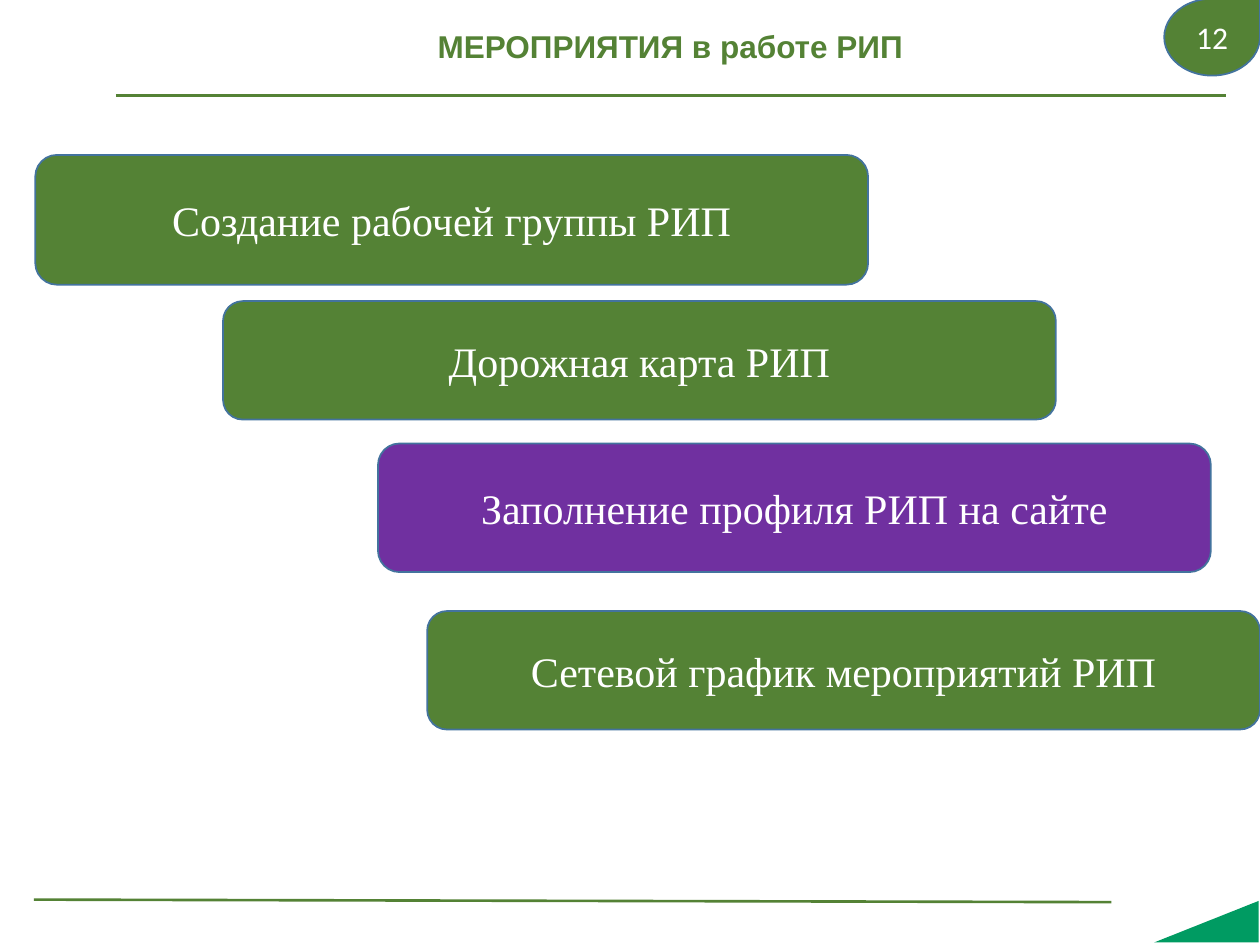
import pptx
import pptx.util
import pptx.dml.color
import pptx.enum.shapes
import pptx.enum.text
import pptx.oxml.ns
from lxml import etree

Inches, Pt = pptx.util.Inches, pptx.util.Pt
RGBColor = pptx.dml.color.RGBColor
SHAPE = pptx.enum.shapes.MSO_SHAPE

GREEN = RGBColor(0x54, 0x82, 0x35)
PURPLE = RGBColor(0x70, 0x30, 0xA0)
EMERALD = RGBColor(0x00, 0x9B, 0x62)
OUTLINE = RGBColor(0x43, 0x73, 0x9E)
WHITE = RGBColor(0xFF, 0xFF, 0xFF)

# Content
HEADING = "МЕРОПРИЯТИЯ в работе РИП"
PAGE_NUMBER = "12"
STEP_WIDTH = 6.61
STEPS = [  # wording, left, top, height, fill
    ("Создание рабочей группы РИП", 0.28, 1.23, 1.03, GREEN),
    ("Дорожная карта РИП", 1.77, 2.39, 0.94, GREEN),
    ("Заполнение профиля РИП на сайте", 3, 3.52, 1.02, PURPLE),
    ("Сетевой график мероприятий РИП", 3.39, 4.85, 0.94, GREEN),
]
RULES = [(0.92, 0.76, 9.73, 0.76), (0.27, 7.14, 8.82, 7.16)]

# Text formats
HEADING_FONT = {"name": "Arial", "size": Pt(18), "bold": True}
STEP_FONT = {"name": "Times New Roman", "size": Pt(24)}
NUMBER_FONT = {"name": "Calibri", "size": Pt(18)}


def write(holder, wording, font_format, color):
    frame = holder.text_frame
    frame.word_wrap = True
    frame.vertical_anchor = pptx.enum.text.MSO_ANCHOR.MIDDLE
    paragraph = frame.paragraphs[0]
    paragraph.alignment = pptx.enum.text.PP_ALIGN.CENTER
    run = paragraph.add_run()
    run.text = wording
    for attribute, value in font_format.items():
        setattr(run.font, attribute, value)
    run.font.color.rgb = color


def add_filled(slide, preset, box, fill, outline=None):
    shape = slide.shapes.add_shape(preset, *map(Inches, box))
    shape.shadow.inherit = False
    shape.fill.solid()
    shape.fill.fore_color.rgb = fill
    if outline is None:
        shape.line.fill.background()
    else:
        shape.line.color.rgb = outline
        shape.line.width = Pt(1)
    return shape


def add_rule(slide, ends):
    rule = slide.shapes.add_connector(
        pptx.enum.shapes.MSO_CONNECTOR.STRAIGHT, *map(Inches, ends))
    rule.line.color.rgb = GREEN
    rule.line.width = Pt(1.5)
    etree.SubElement(rule._element.spPr, pptx.oxml.ns.qn("a:effectLst"))


def main():
    deck = pptx.Presentation()
    deck.slide_width, deck.slide_height = Inches(10), Inches(7.5)
    slide = deck.slides.add_slide(deck.slide_layouts[5])

    # Rules and corner triangle
    for ends in RULES:
        add_rule(slide, ends)
    corner = add_filled(slide, SHAPE.RIGHT_TRIANGLE,
                        (9.41, 6.9, 0.33, 0.83), EMERALD)
    corner.rotation = 270

    # Heading
    heading = slide.shapes.title
    heading.left, heading.top = Inches(0.8), Inches(0.05)
    heading.width, heading.height = Inches(9.04), Inches(0.67)
    write(heading, HEADING, HEADING_FONT, GREEN)
    heading.text_frame.paragraphs[0].line_spacing = 0.9

    # Staircase of steps
    for wording, left, top, height, fill in STEPS:
        step = add_filled(slide, SHAPE.ROUNDED_RECTANGLE,
                          (left, top, STEP_WIDTH, height), fill, OUTLINE)
        write(step, wording, STEP_FONT, WHITE)

    # Page number
    badge = add_filled(slide, SHAPE.TEAR, (9.24, -0.01, 0.76, 0.61),
                       GREEN, OUTLINE)
    write(badge, PAGE_NUMBER, NUMBER_FONT, WHITE)

    deck.save("out.pptx")


if __name__ == "__main__":
    main()
